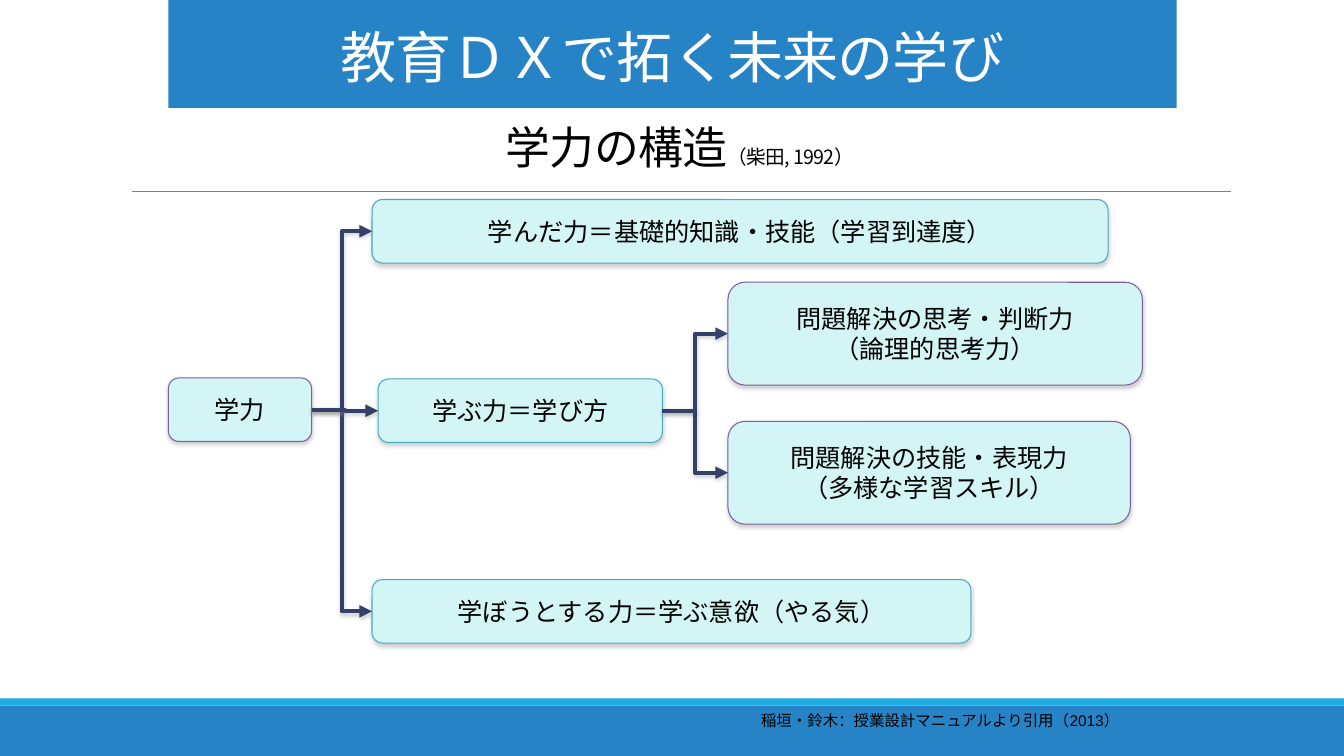
from lxml import etree
from pptx import Presentation
from pptx.dml.color import RGBColor
from pptx.enum.shapes import MSO_CONNECTOR, MSO_SHAPE
from pptx.enum.text import MSO_ANCHOR, MSO_AUTO_SIZE, PP_ALIGN
from pptx.oxml import parse_xml
from pptx.oxml.ns import nsdecls, qn
from pptx.util import Inches, Pt

RECT, ROUNDED = MSO_SHAPE.RECTANGLE, MSO_SHAPE.ROUNDED_RECTANGLE
STRAIGHT, ELBOW = MSO_CONNECTOR.STRAIGHT, MSO_CONNECTOR.ELBOW
CENTER = PP_ALIGN.CENTER
LEFT_SIDE, RIGHT_SIDE = 1, 3
BLUE = RGBColor(0x26, 0x83, 0xC6)
SKY = RGBColor(0x1C, 0xAD, 0xE4)
PALE = RGBColor(0xD3, 0xF5, 0xF6)
PURPLE = RGBColor(0x7D, 0x60, 0xA0)
TEAL = RGBColor(0x46, 0xAA, 0xC5)
NAVY = RGBColor(0x34, 0x40, 0x68)
GRAY = RGBColor(0x80, 0x80, 0x80)
BLACK = RGBColor(0, 0, 0)
WHITE = RGBColor(0xFF, 0xFF, 0xFF)
CJK = "Noto Sans CJK JP"
SHADOW = (
    f'<a:effectLst {nsdecls("a")}><a:outerShdw blurRad="{Pt(3.1)}" dist="{Pt(1.6)}" '
    'dir="5400000" rotWithShape="0"><a:srgbClr val="808080"><a:alpha val="38000"/>'
    '</a:srgbClr></a:outerShdw></a:effectLst>'
)


def format_run(r, size, color, font=CJK, spacing=None):
    r.font.size = Pt(size)
    r.font.color.rgb = color
    r.font.name = font
    rPr = r.font._element
    etree.SubElement(rPr, qn("a:ea")).set("typeface", CJK)
    if spacing is not None:
        rPr.set("spc", str(int(spacing * 100)))


def add_block(shape, left, top, width, height, fill, line=None):
    sp = s.shapes.add_shape(shape, Inches(left), Inches(top), Inches(width), Inches(height))
    sp.fill.solid()
    sp.fill.fore_color.rgb = fill
    if line is None:
        sp.line.fill.background()
        sp.shadow.inherit = False
    else:
        sp.line.color.rgb = line
        sp.line.width = Pt(0.75)
        sp._element.spPr.append(parse_xml(SHADOW))
    return sp


prs = Presentation()
prs.slide_width, prs.slide_height = Inches(13.33), Inches(7.5)
s = prs.slides.add_slide(prs.slide_layouts[5])

add_block(RECT, 0, 7, 13.33, 0.5, BLUE)
add_block(RECT, 0, 6.93, 13.33, 0.07, SKY)

rule = s.shapes.add_connector(STRAIGHT, Inches(1.31), Inches(1.9), Inches(12.21), Inches(1.9))
rule.line.color.rgb = GRAY
rule.line.width = Pt(0.5)
etree.SubElement(rule._element.spPr, qn("a:effectLst"))

title = s.shapes.title
title.left, title.top, title.width, title.height = (Inches(v) for v in (2.95, 1.3, 7.59, 0.47))
tf = title.text_frame
tf.auto_size = MSO_AUTO_SIZE.NONE
tf.vertical_anchor = MSO_ANCHOR.BOTTOM
p = tf.paragraphs[0]
p.alignment = CENTER
p.line_spacing = 0.85
for text, size in (("学力の構造", 32), ("（柴田, 1992）", 14)):
    r = p.add_run()
    r.text = text
    format_run(r, size, BLACK, spacing=-0.5)

boxes = {}
for name, left, top, width, height, line, text in (
    ("ability", 1.67, 3.75, 1.42, 0.63, PURPLE, "学力"),
    ("learned", 3.69, 1.98, 7.3, 0.63, TEAL, "学んだ力＝基礎的知識・技能（学習到達度）"),
    ("learning", 3.75, 3.76, 2.82, 0.63, TEAL, "学ぶ力＝学び方"),
    ("motivation", 3.69, 5.75, 5.94, 0.63, TEAL, "学ぼうとする力＝学ぶ意欲（やる気）"),
    ("thinking", 7.22, 2.8, 4.11, 1.02, PURPLE, "問題解決の思考・判断力\n（論理的思考力）"),
    ("skills", 7.22, 4.18, 3.99, 1.02, PURPLE, "問題解決の技能・表現力\n（多様な学習スキル）"),
):
    sp = add_block(ROUNDED, left, top, width, height, PALE, line)
    tf = sp.text_frame
    tf.text = text
    tf.vertical_anchor = MSO_ANCHOR.MIDDLE
    for p in tf.paragraphs:
        p.alignment = CENTER
        format_run(p.runs[0], 18, BLACK)
    boxes[name] = sp

for start, end in (
    ("ability", "motivation"),
    ("ability", "learned"),
    ("ability", "learning"),
    ("learning", "thinking"),
    ("learning", "skills"),
):
    arrow = s.shapes.add_connector(ELBOW, 0, 0, 0, 0)
    arrow.begin_connect(boxes[start], RIGHT_SIDE)
    arrow.end_connect(boxes[end], LEFT_SIDE)
    arrow.line.color.rgb = NAVY
    arrow.line.width = Pt(3)
    etree.SubElement(arrow.line._get_or_add_ln(), qn("a:tailEnd")).set("type", "triangle")
    arrow._element.spPr.append(parse_xml(SHADOW))

citation = s.shapes.add_textbox(Inches(7.45), Inches(7.01), Inches(4.02), Inches(0.29))
tf = citation.text_frame
tf.word_wrap = True
tf.text = "稲垣・鈴木：授業設計マニュアルより引用（2013）"
format_run(tf.paragraphs[0].runs[0], 11, BLACK, font="Arial")

banner = add_block(RECT, 1.67, 0, 10, 1.07, BLUE)
tf = banner.text_frame
tf.margin_top = Inches(0.2)
tf.vertical_anchor = MSO_ANCHOR.MIDDLE
tf.text = "教育ＤＸで拓く未来の学び"
p = tf.paragraphs[0]
p.alignment = CENTER
p.line_spacing = 0.85
format_run(p.runs[0], 40, WHITE, spacing=-0.5)

prs.save("out.pptx")
